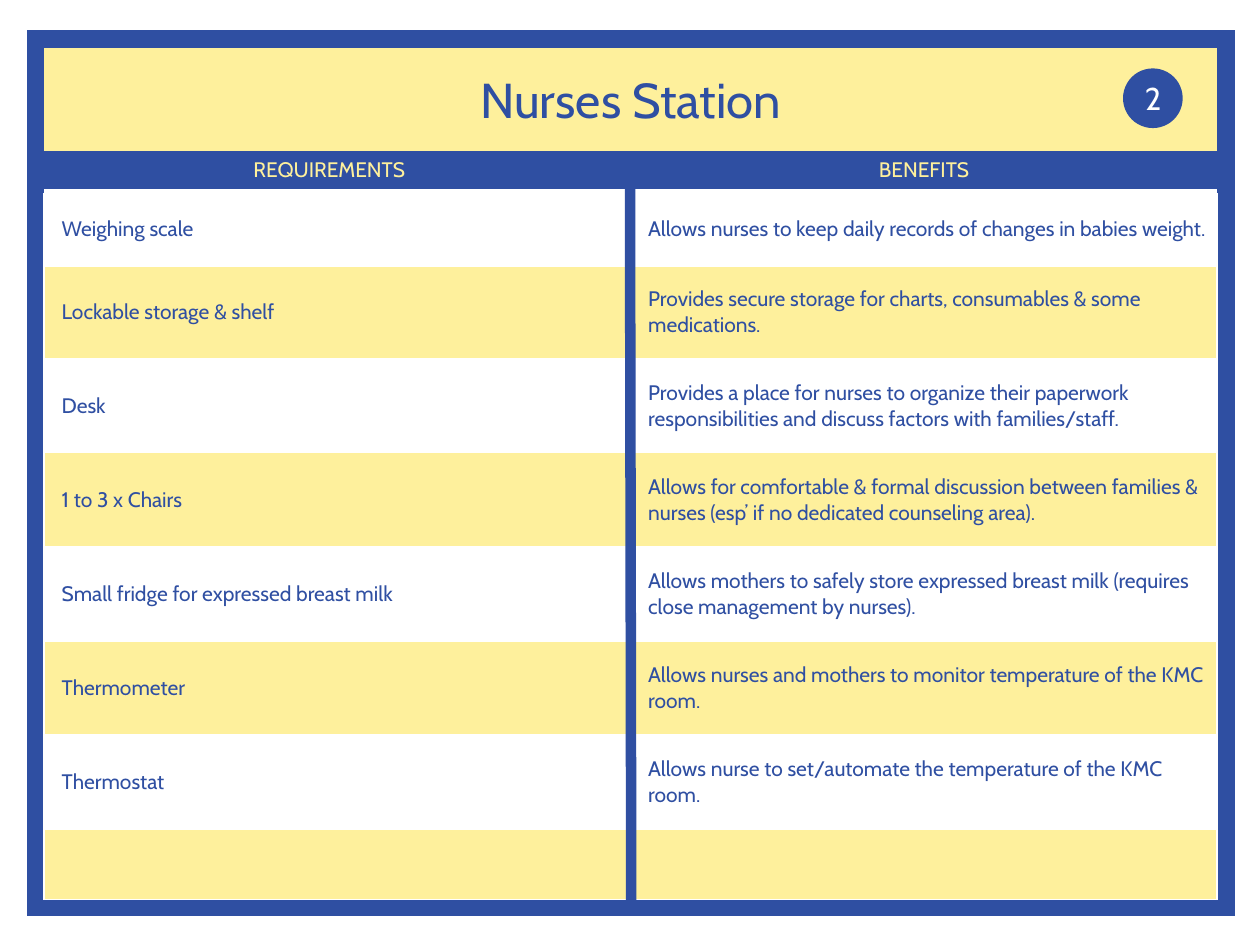
from lxml import etree
from pptx import Presentation
from pptx.dml.color import RGBColor
from pptx.enum.shapes import MSO_CONNECTOR, MSO_SHAPE
from pptx.enum.text import MSO_ANCHOR, MSO_AUTO_SIZE, PP_ALIGN
from pptx.oxml import parse_xml
from pptx.oxml.ns import nsdecls, qn
from pptx.util import Inches, Pt

BLUE = RGBColor(0x2F, 0x4F, 0xA2)
YELLOW = RGBColor(0xFE, 0xF0, 0x9C)
WHITE = RGBColor(0xFF, 0xFF, 0xFF)
FONT = "Cabin"

RECT, OVAL = MSO_SHAPE.RECTANGLE, MSO_SHAPE.OVAL
STRAIGHT = MSO_CONNECTOR.STRAIGHT
CENTER, MIDDLE = PP_ALIGN.CENTER, MSO_ANCHOR.MIDDLE
NO_FIT = MSO_AUTO_SIZE.NONE

LEFT, WIDTH = 0.28, 9.45
ROWS = [
    ("Weighing scale",
     "Allows nurses to keep daily records of changes in babies weight."),
    ("Lockable storage & shelf",
     "Provides secure storage for charts, consumables & some medications."),
    ("Desk",
     "Provides a place for nurses to organize their paperwork "
     "responsibilities and discuss factors with families/staff."),
    ("1 to 3 x Chairs",
     "Allows for comfortable & formal discussion between families & nurses "
     "(esp’ if no dedicated counseling area)."),
    ("Small fridge for expressed breast milk",
     "Allows mothers to safely store expressed breast milk (requires close "
     "management by nurses)."),
    ("Thermometer",
     "Allows nurses and mothers to monitor temperature of the KMC room."),
    ("Thermostat",
     "Allows nurse to set/automate the temperature of the KMC room."),
    ("", ""),
]


def set_text(tf, text, size, color, align=None):
    p = tf.paragraphs[0]
    p.text = text
    p.alignment = align
    p.font.name, p.font.size, p.font.color.rgb = FONT, Pt(size), color


def add_shape(s, kind, box, fill=None, line_width=None):
    sp = s.shapes.add_shape(kind, *map(Inches, box))
    sp.shadow.inherit = False
    if fill is None:
        sp.fill.background()
    else:
        sp.fill.solid()
        sp.fill.fore_color.rgb = fill
    if line_width is None:
        sp.line.fill.background()
    else:
        sp.line.color.rgb = BLUE
        sp.line.width = Pt(line_width)
    return sp


def add_line(s, *ends):
    line = s.shapes.add_connector(STRAIGHT, *map(Inches, ends))
    line.line.color.rgb = BLUE
    line.line.width = Pt(6)
    etree.SubElement(line.element.spPr, qn("a:effectLst"))


def set_borders(cell, bottom):
    """Give a cell white borders, 1 pt except at the bottom."""
    tcPr = cell._tc.get_or_add_tcPr()
    widths = {"lnL": 1, "lnR": 1, "lnT": 1, "lnB": bottom}
    for i, (side, width) in enumerate(widths.items()):
        tcPr.insert(i, parse_xml(
            f'<a:{side} {nsdecls("a")} w="{Pt(width)}"><a:solidFill>'
            f'<a:srgbClr val="{WHITE}"/></a:solidFill></a:{side}>'))


def add_frame(s, x, y, w, h):
    add_shape(s, RECT, (x, y, w, 1.18), YELLOW)
    frame = add_shape(s, RECT, (x, y, w, h), line_width=10)
    # Square corners
    etree.SubElement(frame.element.spPr.find(qn("a:ln")), qn("a:miter"), lim="800000")


def add_column_heads(s, x, y, w, h):
    add_shape(s, RECT, (x, y, w, h), BLUE)
    for left, text in ((x, "REQUIREMENTS"), (5, "BENEFITS")):
        box = s.shapes.add_textbox(*map(Inches, (left, y - 0.01, 4.67, h)))
        box.text_frame.word_wrap = True
        set_text(box.text_frame, text, 12, YELLOW, CENTER)


def add_requirements_table(s, x, y, w, h):
    table = s.shapes.add_table(len(ROWS), 2, *map(Inches, (x, y, w, h))).table
    table.first_row = table.horz_banding = False
    end_height = 0.56
    row_height = (h - 2 * end_height) / (len(ROWS) - 2)
    for i, texts in enumerate(ROWS):
        is_end = i in (0, len(ROWS) - 1)
        table.rows[i].height = Inches(end_height if is_end else row_height)
        for cell, text in zip(table.rows[i].cells, texts):
            cell.fill.solid()
            cell.fill.fore_color.rgb = YELLOW if i % 2 else WHITE
            cell.vertical_anchor = MIDDLE
            cell.margin_left, cell.margin_right = Inches(0.14), Inches(0.07)
            cell.margin_top = cell.margin_bottom = Inches(0.04)
            set_text(cell.text_frame, text, 12, BLUE)
            set_borders(cell, bottom=1 if i else 3)


def add_title(s, x, y, w, h):
    title = s.shapes.title
    title.left, title.top, title.width, title.height = map(Inches, (x, y, w, h))
    tf = title.text_frame
    tf.auto_size, tf.vertical_anchor = NO_FIT, MIDDLE
    set_text(tf, "Nurses Station", 28, BLUE, CENTER)
    # Bring the title in front of the yellow band
    s.shapes.element.append(title.element)


def add_number(s, x, y, w, h):
    badge = add_shape(s, OVAL, (x, y, w, h), BLUE, line_width=1)
    tf = badge.text_frame
    tf.vertical_anchor = MIDDLE
    set_text(tf, "2", 18, WHITE, CENTER)


def main():
    prs = Presentation()
    prs.slide_width, prs.slide_height = Inches(10), Inches(7.5)
    s = prs.slides.add_slide(prs.slide_layouts[5])

    add_frame(s, LEFT, 0.31, WIDTH, 6.89)
    add_column_heads(s, LEFT, 1.2, WIDTH, 0.3)
    add_requirements_table(s, 0.35, 1.54, 9.31, 5.6)
    add_line(s, 5, 1.46, 5.01, 7.15)  # between the columns
    add_title(s, LEFT, 0.5, WIDTH, 0.57)
    add_line(s, LEFT, 1.46, 9.66, 1.46)  # under the column heads
    add_number(s, 8.92, 0.55, 0.46, 0.46)

    prs.save("out.pptx")


if __name__ == "__main__":
    main()
